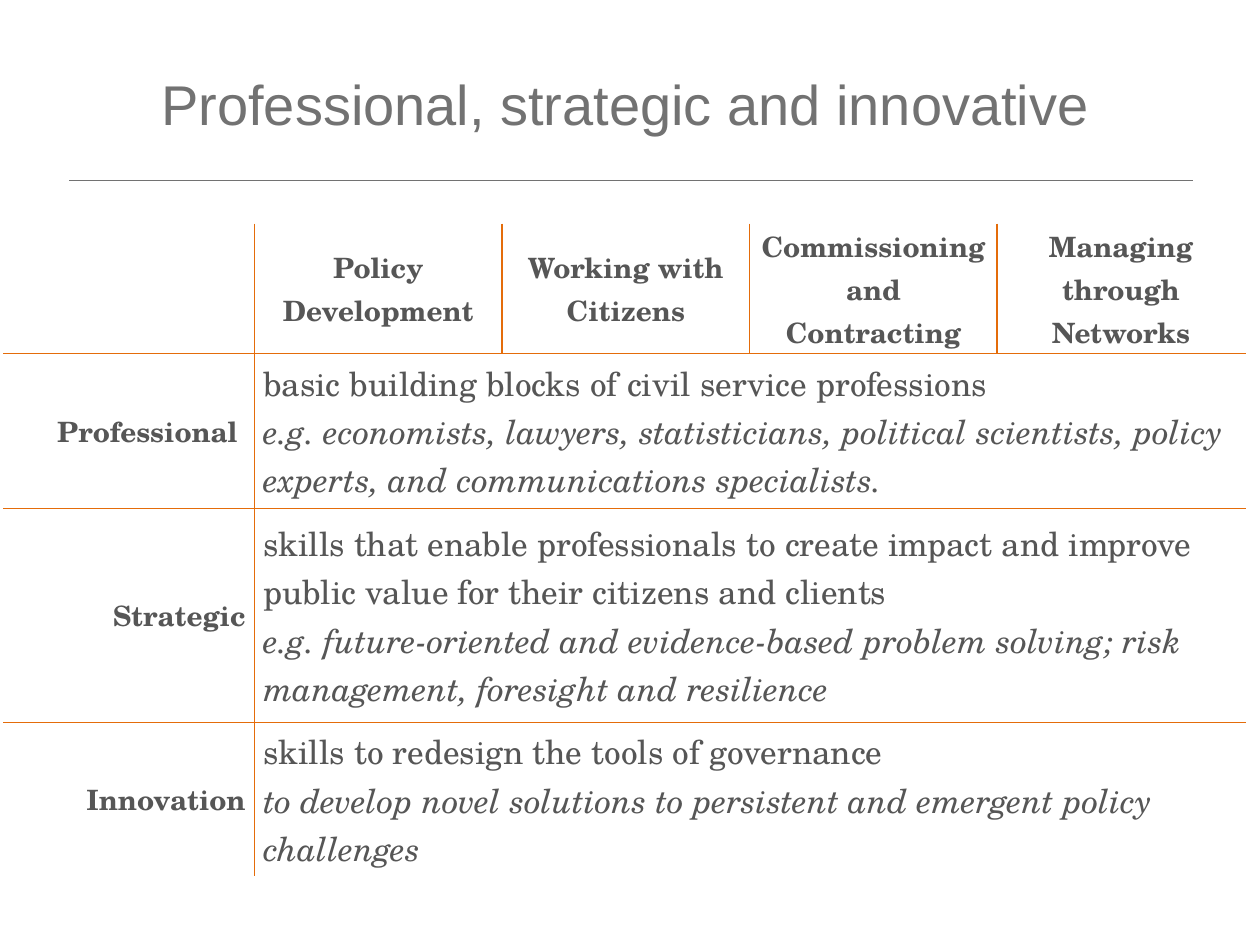
from lxml import etree
from pptx import Presentation
from pptx.dml.color import RGBColor
from pptx.enum.shapes import MSO_CONNECTOR
from pptx.enum.text import MSO_ANCHOR, PP_ALIGN
from pptx.oxml.ns import qn
from pptx.util import Inches, Pt

LEFT, CENTER, RIGHT = PP_ALIGN.LEFT, PP_ALIGN.CENTER, PP_ALIGN.RIGHT
MIDDLE = MSO_ANCHOR.MIDDLE
STRAIGHT = MSO_CONNECTOR.STRAIGHT

# Content
TITLE = "Professional, strategic and innovative"
SKILL_AREAS = ["Policy Development", "Working with Citizens",
               "Commissioning and Contracting", "Managing through Networks"]
LEVELS = [
    ("Professional ", "basic building blocks of civil service professions",
     "e.g. economists, lawyers, statisticians, political scientists, policy "
     "experts, and communications specialists."),
    ("Strategic",
     "skills that enable professionals to create impact and improve public "
     "value for their citizens and clients",
     "e.g. future-oriented and evidence-based problem solving; risk "
     "management, foresight and resilience"),
    ("Innovation", "skills to redesign the tools of governance",
     "to develop novel solutions to persistent and emergent policy challenges"),
]

COLORS = {"title": "727272", "text": "565656", "grid": "E46C0A", "edge": "FFFFFF"}
LAST_ROW, LAST_COLUMN = len(LEVELS), len(SKILL_AREAS)
TABLE_WIDTH, LEVEL_WIDTH = 9.85, 1.99
AREA_WIDTH = (TABLE_WIDTH - LEVEL_WIDTH) / LAST_COLUMN
COLUMN_WIDTHS = [LEVEL_WIDTH] + [AREA_WIDTH] * LAST_COLUMN
ROW_HEIGHTS = [0.9, 1.23, 1.7, 1.22]


def color(name):
    return RGBColor.from_string(COLORS[name])


def write(paragraph, text, size=16, font="TeX Gyre Schola", ink="text",
          bold=False, italic=False, align=LEFT):
    paragraph.alignment = align
    run = paragraph.add_run()
    run.text = text
    run.font.size, run.font.name = Pt(size), font
    run.font.bold, run.font.italic = bold, italic
    run.font.color.rgb = color(ink)


def set_borders(cell, row, column):
    """White on the outside of the table, orange between its cells."""
    last_column = column + (cell.span_width if cell.is_merge_origin else 1) - 1
    outer = {"L": column == 0, "R": last_column == LAST_COLUMN,
             "T": row == 0, "B": row == LAST_ROW}
    properties = cell._tc.get_or_add_tcPr()
    for position, side in enumerate("LRTB"):
        line = etree.Element(qn(f"a:ln{side}"), w=str(Pt(1)))
        fill = etree.SubElement(line, qn("a:solidFill"))
        etree.SubElement(fill, qn("a:srgbClr"),
                         val=COLORS["edge" if outer[side] else "grid"])
        properties.insert(position, line)


presentation = Presentation()
presentation.slide_width, presentation.slide_height = Inches(10), Inches(7.5)
slide = presentation.slides.add_slide(presentation.slide_layouts[5])

# Title and rule
title = slide.shapes.title
title.left, title.top = Inches(1.18), Inches(0.26)
title.width, title.height = Inches(8.11), Inches(1.12)
title.text_frame.vertical_anchor = MIDDLE
write(title.text_frame.paragraphs[0], TITLE, size=32, font="Arial", ink="title")

rule = slide.shapes.add_connector(STRAIGHT, Inches(0.55), Inches(1.43),
                                  Inches(9.47), Inches(1.43))
rule.line.color.rgb = color("title")
rule.line.width = Pt(0.5)
etree.SubElement(rule._element.spPr, qn("a:effectLst"))

# Skills table
table = slide.shapes.add_table(
    len(ROW_HEIGHTS), len(COLUMN_WIDTHS), Inches(0.03), Inches(1.78),
    Inches(TABLE_WIDTH), Inches(sum(ROW_HEIGHTS))).table
table.first_row = table.horz_banding = False
for column, width in zip(table.columns, COLUMN_WIDTHS):
    column.width = Inches(width)
for row, height in zip(table.rows, ROW_HEIGHTS):
    row.height = Inches(height)

# Each description spans all skill areas
for row in range(1, LAST_ROW + 1):
    table.cell(row, 1).merge(table.cell(row, LAST_COLUMN))

for row in range(LAST_ROW + 1):
    for column in range(LAST_COLUMN + 1):
        cell = table.cell(row, column)
        cell.fill.background()
        cell.vertical_anchor = MIDDLE
        cell.margin_left = cell.margin_right = Inches(0.07)
        cell.margin_top = cell.margin_bottom = 0
        if not cell.is_spanned:
            set_borders(cell, row, column)

for column, area in enumerate(SKILL_AREAS, start=1):
    write(table.cell(0, column).text_frame.paragraphs[0], area,
          bold=True, align=CENTER)

for row, (level, skills, example) in enumerate(LEVELS, start=1):
    write(table.cell(row, 0).text_frame.paragraphs[0], level,
          bold=True, align=RIGHT)
    description = table.cell(row, 1).text_frame
    write(description.paragraphs[0], skills, size=19)
    write(description.add_paragraph(), example, size=19, italic=True)

presentation.save("out.pptx")
